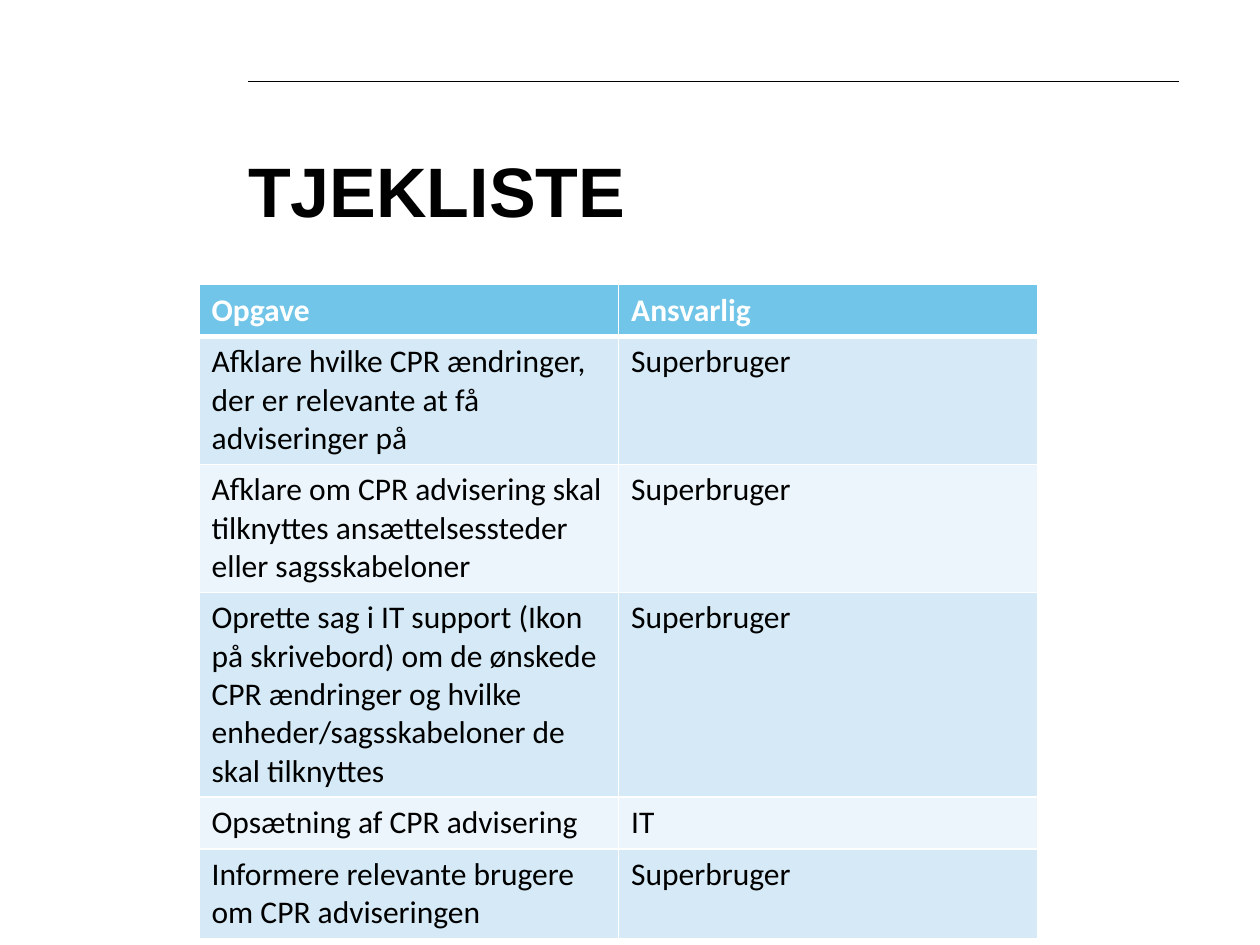
import pptx
import pptx.dml.color
import pptx.enum.shapes
import pptx.enum.text
import pptx.oxml
import pptx.oxml.ns
import pptx.util
from pptx.util import Inches

RGBColor = pptx.dml.color.RGBColor
BLACK = RGBColor(0x00, 0x00, 0x00)
WHITE = RGBColor(0xFF, 0xFF, 0xFF)
HEADER_BLUE = RGBColor(0x71, 0xC5, 0xE8)
BAND_DARK = RGBColor(0xD5, 0xEA, 0xF6)
BAND_LIGHT = RGBColor(0xEB, 0xF5, 0xFB)

TASKS = [
    ("Opgave", "Ansvarlig"),
    ("Afklare hvilke CPR ændringer, der er relevante at få adviseringer på", "Superbruger"),
    ("Afklare om CPR advisering skal tilknyttes ansættelsessteder eller sagsskabeloner",
     "Superbruger"),
    ("Oprette sag i IT support (Ikon på skrivebord) om de ønskede CPR ændringer "
     "og hvilke enheder/sagsskabeloner de skal tilknyttes", "Superbruger"),
    ("Opsætning af CPR advisering", "IT"),
    ("Informere relevante brugere om CPR adviseringen", "Superbruger"),
]


def set_borders(cell, widths):
    """Draw white borders; widths maps each side (L, R, T, B) to points."""
    properties = cell._tc.get_or_add_tcPr()
    for position, (side, width) in enumerate(widths.items()):
        border = pptx.oxml.parse_xml(
            f'<a:ln{side} {pptx.oxml.ns.nsdecls("a")} w="{pptx.util.Pt(width)}">'
            f'<a:solidFill><a:srgbClr val="{WHITE}"/></a:solidFill></a:ln{side}>')
        properties.insert(position, border)


prs = pptx.Presentation()
prs.slide_width, prs.slide_height = Inches(10), Inches(7.5)
slide = prs.slides.add_slide(prs.slide_layouts[5])

top_rule = slide.shapes.add_connector(
    pptx.enum.shapes.MSO_CONNECTOR.STRAIGHT,
    Inches(1.97), Inches(0.65), Inches(9.36), Inches(0.65))
top_rule.line.color.rgb = BLACK
top_rule.line.width = pptx.util.Pt(0.5)
top_rule._element.spPr.append(
    pptx.oxml.parse_xml(f'<a:effectLst {pptx.oxml.ns.nsdecls("a")}/>'))

title = slide.shapes.title
title.left, title.top = Inches(1.97), Inches(1.03)
title.width, title.height = Inches(6.12), Inches(0.81)
heading = title.text_frame
heading.text = "TJEKLISTE"
heading.margin_left = heading.margin_right = heading.margin_top = heading.margin_bottom = 0
heading.vertical_anchor = pptx.enum.text.MSO_ANCHOR.BOTTOM
heading.auto_size = pptx.enum.text.MSO_AUTO_SIZE.NONE
heading.word_wrap = True
heading_line = heading.paragraphs[0]
heading_line.alignment = pptx.enum.text.PP_ALIGN.LEFT
heading_line.line_spacing = pptx.util.Pt(40)
heading_font = heading_line.runs[0].font
heading_font.name = "Arial"
heading_font.size = pptx.util.Pt(40)
heading_font.bold = True
heading_font.color.rgb = BLACK

checklist = slide.shapes.add_table(
    len(TASKS), 2, Inches(1.58), Inches(2.26), Inches(6.66), Inches(0.41 * len(TASKS))).table
for column in checklist.columns:
    column.width = Inches(3.33)

for row, task in enumerate(TASKS):
    checklist.rows[row].height = Inches(0.41)
    is_header = row == 0
    band = HEADER_BLUE if is_header else BAND_DARK if row % 2 else BAND_LIGHT
    for column, wording in enumerate(task):
        cell = checklist.cell(row, column)
        cell.text_frame.text = wording
        cell.fill.solid()
        cell.fill.fore_color.rgb = band
        set_borders(cell, {"L": 1, "R": 1, "T": 3 if row == 1 else 1, "B": 3 if is_header else 1})
        font = cell.text_frame.paragraphs[0].runs[0].font
        font.name = "Calibri"
        font.size = pptx.util.Pt(18)
        font.bold = is_header
        font.color.rgb = WHITE if is_header else BLACK

prs.save("out.pptx")
